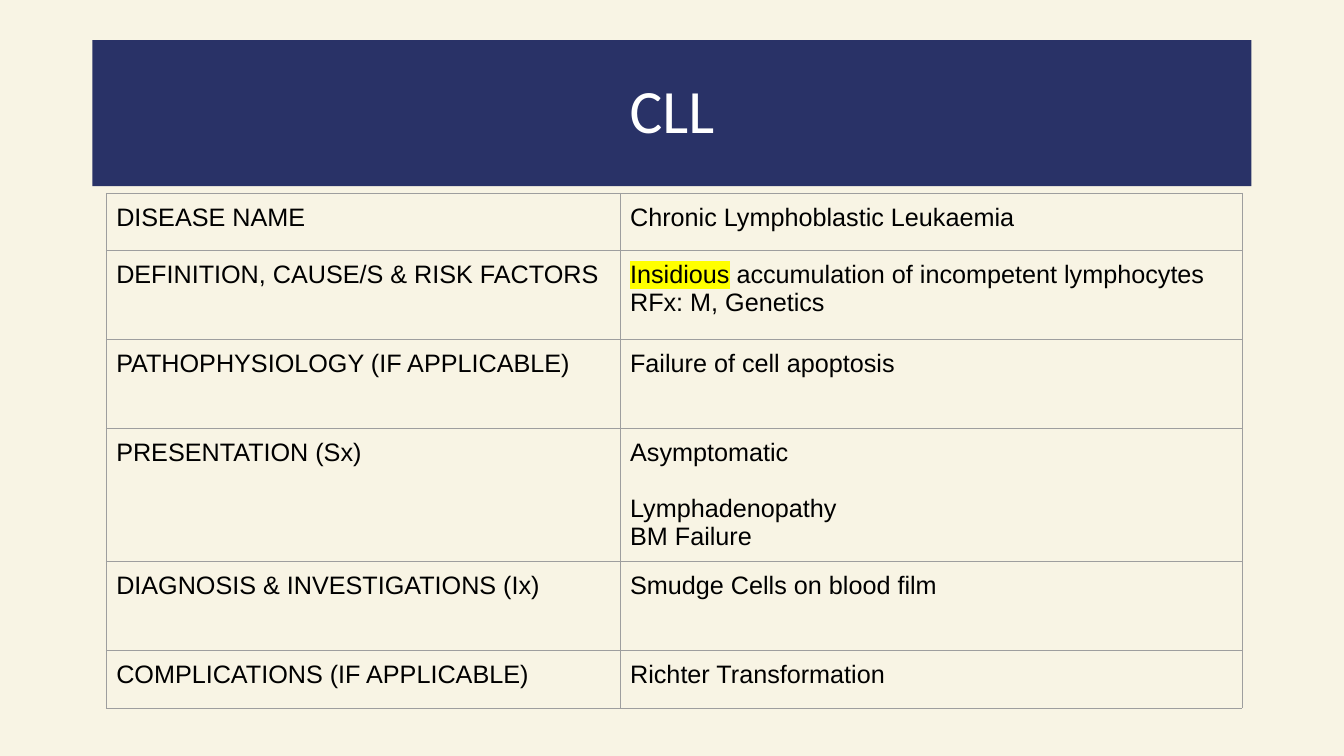
import pptx
import pptx.dml.color
import pptx.enum.shapes
import pptx.enum.text
import pptx.oxml
import pptx.oxml.ns
import pptx.util
from pptx.util import Cm

COLOURS = {
    "cream": "F8F4E4",
    "navy": "293267",
    "white": "FFFFFF",
    "black": "000000",
    "grey": "9E9E9E",
    "yellow": "FFFF00",
}
NAMESPACE = pptx.oxml.ns.nsdecls("a")

DISEASE_ROWS = [
    (1.45, "DISEASE NAME", ["Chronic Lymphoblastic Leukaemia"]),
    (2.24, "DEFINITION, CAUSE/S & RISK FACTORS",
     ["Insidious accumulation of incompetent lymphocytes", "RFx: M, Genetics"]),
    (2.24, "PATHOPHYSIOLOGY (IF APPLICABLE)", ["Failure of cell apoptosis"]),
    (3.35, "PRESENTATION (Sx)", ["Asymptomatic", "Lymphadenopathy", "BM Failure"]),
    (2.24, "DIAGNOSIS & INVESTIGATIONS (Ix)", ["Smudge Cells on blood film"]),
    (1.45, "COMPLICATIONS (IF APPLICABLE)", ["Richter Transformation"]),
]
HIGHLIGHTED = "Insidious"
SPACED = "Lymphadenopathy"


def rgb(name):
    return pptx.dml.color.RGBColor.from_string(COLOURS[name])


class DiseaseSlide:
    """Draws a disease summary slide in one consistent style."""

    def __init__(self, deck):
        self.page = deck.slides.add_slide(deck.slide_layouts[6])
        self.page.background.fill.solid()
        self.page.background.fill.fore_color.rgb = rgb("cream")

    def style(self, para, font_name, size, colour):
        para.font.name = font_name
        para.font.size = pptx.util.Pt(size)
        para.font.color.rgb = rgb(colour)

    def title(self, text, left, top, width, height):
        box = self.page.shapes.add_shape(
            pptx.enum.shapes.MSO_SHAPE.RECTANGLE,
            Cm(left), Cm(top), Cm(width), Cm(height))
        box.shadow.inherit = False
        box.fill.solid()
        box.fill.fore_color.rgb = rgb("navy")
        box.line.fill.background()
        box.text_frame.vertical_anchor = pptx.enum.text.MSO_ANCHOR.MIDDLE
        para = box.text_frame.paragraphs[0]
        para.text = text
        para.alignment = pptx.enum.text.PP_ALIGN.CENTER
        para.line_spacing = 0.9
        self.style(para, "Calibri", 44, "white")

    def table(self, rows, left, top, widths):
        heights = [height for height, label, lines in rows]
        frame = self.page.shapes.add_table(
            len(rows), len(widths), Cm(left), Cm(top), Cm(sum(widths)), Cm(sum(heights)))
        grid = frame.table
        grid.first_row = False
        grid.horz_banding = False
        for column, width in zip(grid.columns, widths):
            column.width = Cm(width)
        for index, (height, label, lines) in enumerate(rows):
            grid.rows[index].height = Cm(height)
            self.cell(grid.cell(index, 0), [label])
            self.cell(grid.cell(index, 1), lines)

    def cell(self, cell, lines):
        cell.margin_left = cell.margin_right = Cm(0.25)
        cell.margin_top = cell.margin_bottom = Cm(0.25)
        self.borders(cell)
        cell.fill.background()
        for index, line in enumerate(lines):
            frame = cell.text_frame
            para = frame.add_paragraph() if index else frame.paragraphs[0]
            self.style(para, "Arial", 18, "black")
            if line == SPACED:
                para.space_before = pptx.util.Pt(20)
            if line.startswith(HIGHLIGHTED):
                self.highlight(para, HIGHLIGHTED)
                line = line.removeprefix(HIGHLIGHTED)
            para.add_run().text = line

    def highlight(self, para, word):
        span = para.add_run()
        span.text = word
        span.font.fill.solid()
        span.font.fill.fore_color.rgb = rgb("black")
        span.font.fill.fore_color.rgb = rgb("black")
        properties = span._r.get_or_add_rPr()
        properties.append(pptx.oxml.parse_xml(
            f'<a:highlight {NAMESPACE}><a:srgbClr val="{COLOURS["yellow"]}"/></a:highlight>'))

    def borders(self, cell):
        properties = cell._tc.get_or_add_tcPr()
        for side in ("lnL", "lnR", "lnT", "lnB"):
            properties.append(pptx.oxml.parse_xml(
                f'<a:{side} {NAMESPACE} w="{pptx.util.Pt(0.75)}"><a:solidFill>'
                f'<a:srgbClr val="{COLOURS["grey"]}"/></a:solidFill></a:{side}>'))


def main():
    deck = pptx.Presentation()
    deck.slide_width = Cm(33.87)
    deck.slide_height = Cm(19.05)
    summary = DiseaseSlide(deck)
    summary.title("CLL", 2.33, 1.01, 29.21, 3.68)
    summary.table(DISEASE_ROWS, 2.68, 4.87, [12.95, 15.67])
    deck.save("out.pptx")


if __name__ == "__main__":
    main()
